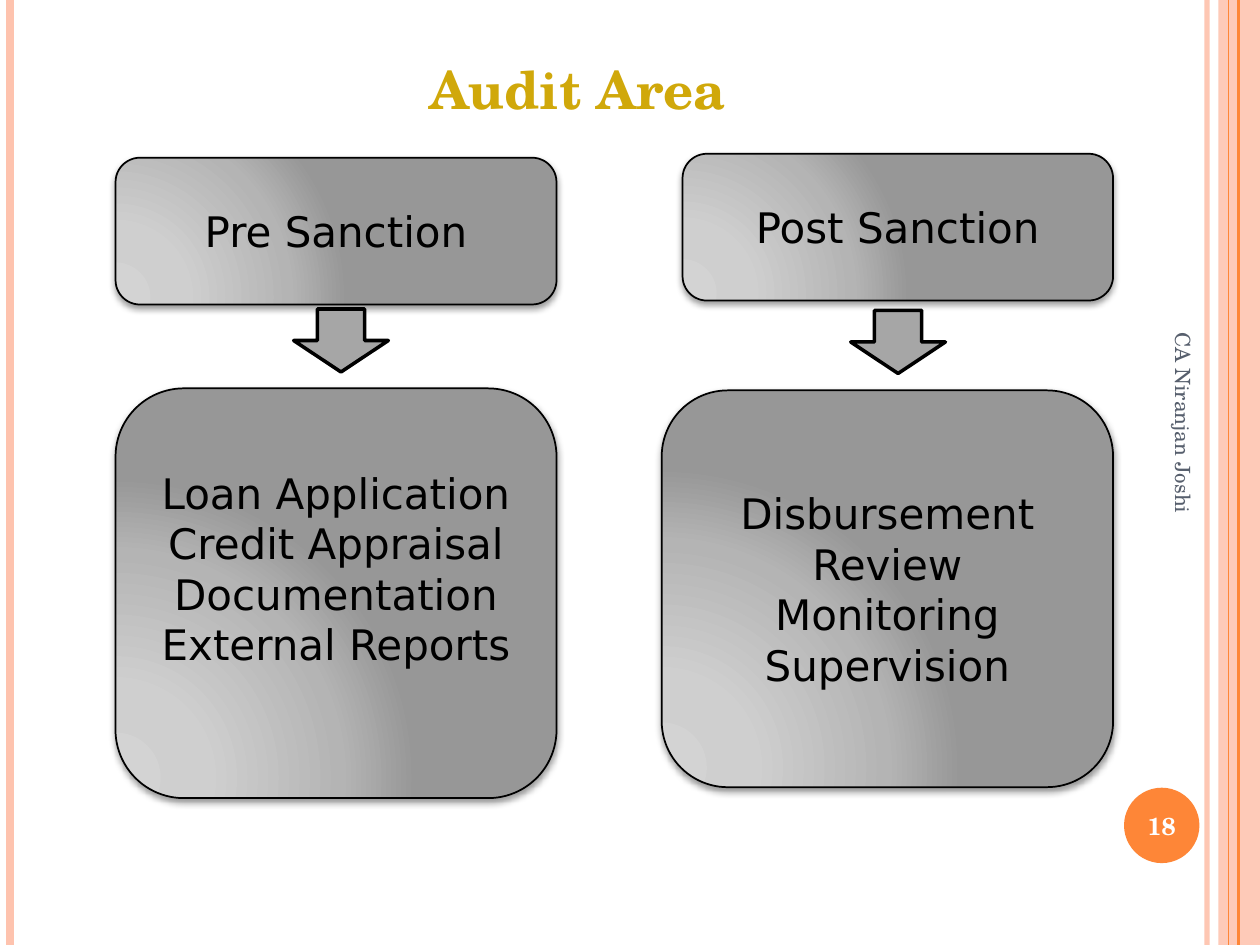
from dataclasses import dataclass

from lxml import etree
from pptx import Presentation
from pptx.dml.color import RGBColor
from pptx.enum.shapes import MSO_CONNECTOR, MSO_SHAPE
from pptx.enum.text import MSO_ANCHOR, PP_ALIGN
from pptx.oxml import parse_xml
from pptx.oxml.ns import qn
from pptx.util import Cm, Pt

ROUNDED = MSO_SHAPE.ROUNDED_RECTANGLE
PROCESS = MSO_SHAPE.FLOWCHART_ALTERNATE_PROCESS
DOWN_ARROW = MSO_SHAPE.DOWN_ARROW
RECTANGLE = MSO_SHAPE.RECTANGLE
OVAL = MSO_SHAPE.OVAL
STRAIGHT = MSO_CONNECTOR.STRAIGHT
CENTER, LEFT = PP_ALIGN.CENTER, PP_ALIGN.LEFT
MIDDLE, BOTTOM = MSO_ANCHOR.MIDDLE, MSO_ANCHOR.BOTTOM

SERIF, SANS = "TeX Gyre Schola", "DejaVu Sans"
BLACK, WHITE, GREY = "000000", "FFFFFF", "A6A6A6"
ORANGE, PEACH, GOLD, SLATE = "FE8637", "FEC3AE", "D0A80A", "575F6D"
SLIDE_WIDTH, SLIDE_HEIGHT = 25.4, 19.05
DRAWING_NS = "http://schemas.openxmlformats.org/drawingml/2006/main"
GRADIENT_STOPS = ((0, "D3D3D3"), (30, "CFCFCF"), (75, "B4B4B4"), (100, "979797"))


@dataclass(frozen=True)
class Rule:
    x: float
    color: str
    width: float
    opacity: int = 100


@dataclass(frozen=True)
class Box:
    left: float
    top: float
    width: float
    height: float


@dataclass(frozen=True)
class Stage:
    heading: str
    heading_box: Box
    arrow_box: Box
    steps: str
    steps_box: Box
    bottom_inset: float = 0.13


RULES = (
    Rule(24.33, PEACH, 3, 93),
    Rule(0.2, PEACH, 4.5),
    Rule(24.97, ORANGE, 1.5),
    Rule(24.77, ORANGE, 0.75),
)
STAGES = (
    Stage("Pre Sanction", Box(2.33, 3.18, 8.89, 2.96), Box(5.92, 6.23, 1.91, 1.27),
          "Loan Application\nCredit Appraisal\nDocumentation\nExternal Reports",
          Box(2.33, 7.83, 8.89, 8.26), 1.13),
    Stage("Post Sanction", Box(13.76, 3.1, 8.68, 2.96), Box(17.15, 6.26, 1.91, 1.27),
          "Disbursement\nReview\nMonitoring\nSupervision",
          Box(13.34, 7.87, 9.1, 8)),
)


def rgb(color: str) -> RGBColor:
    return RGBColor.from_string(color)


def bounds(box: Box) -> tuple:
    return Cm(box.left), Cm(box.top), Cm(box.width), Cm(box.height)


def write(shape, text: str, *, size: float, color: str, font: str = SERIF,
          bold: bool = False, align=CENTER, anchor=MIDDLE) -> None:
    frame = shape.text_frame
    frame.word_wrap = True
    frame.vertical_anchor = anchor
    frame.text = text
    for paragraph in frame.paragraphs:
        paragraph.alignment = align
        for run in paragraph.runs:
            run.font.name = font
            run.font.size = Pt(size)
            run.font.bold = bold
            run.font.color.rgb = rgb(color)


def set_opacity(fill_owner, percent: int) -> None:
    for color in fill_owner.iter(qn("a:srgbClr")):
        etree.SubElement(color, qn("a:alpha"), val=str(percent * 1000))


def draw_rule(slide, rule: Rule) -> None:
    x = Cm(rule.x)
    line = slide.shapes.add_connector(STRAIGHT, x, 0, x, Cm(SLIDE_HEIGHT))
    line.line.color.rgb = rgb(rule.color)
    line.line.width = Pt(rule.width)
    properties = line._element.spPr
    if rule.opacity < 100:
        set_opacity(properties, rule.opacity)
    etree.SubElement(properties, qn("a:effectLst"))


def draw_shape(slide, preset, box: Box, *, fill: str, outline: float = 0):
    shape = slide.shapes.add_shape(preset, *bounds(box))
    shape.shadow.inherit = False
    shape.fill.solid()
    shape.fill.fore_color.rgb = rgb(fill)
    if outline:
        shape.line.color.rgb = rgb(BLACK)
        shape.line.width = Pt(outline)
    else:
        shape.line.fill.background()
    return shape


def draw_panel(slide, preset, box: Box, text: str):
    panel = draw_shape(slide, preset, box, fill=GREY, outline=1)
    properties = panel._element.spPr
    stops = "".join(
        f'<a:gs pos="{position * 1000}"><a:srgbClr val="{color}"/></a:gs>'
        for position, color in GRADIENT_STOPS
    )
    gradient = parse_xml(
        f'<a:gradFill xmlns:a="{DRAWING_NS}" rotWithShape="1"><a:gsLst>{stops}</a:gsLst>'
        '<a:path path="circle"><a:fillToRect l="5000" t="100000" r="120000" b="10000"/>'
        "</a:path></a:gradFill>"
    )
    properties.replace(properties.find(qn("a:solidFill")), gradient)
    shadow = parse_xml(
        f'<a:outerShdw xmlns:a="{DRAWING_NS}" blurRad="{Pt(4)}" dist="{Pt(2)}" '
        f'dir="5400000" rotWithShape="0"><a:srgbClr val="{BLACK}"/></a:outerShdw>'
    )
    set_opacity(shadow, 40)
    properties.find(qn("a:effectLst")).append(shadow)
    write(panel, text, size=24, color=BLACK, font=SANS)
    return panel


def draw_stage(slide, stage: Stage) -> None:
    draw_panel(slide, ROUNDED, stage.heading_box, stage.heading)
    draw_shape(slide, DOWN_ARROW, stage.arrow_box, fill=GREY, outline=2)
    steps = draw_panel(slide, PROCESS, stage.steps_box, stage.steps)
    steps.text_frame.margin_bottom = Cm(stage.bottom_inset)


def draw_frame(slide) -> None:
    side_band = draw_shape(slide, RECTANGLE, Box(24.56, 0, 0.84, SLIDE_HEIGHT), fill=PEACH)
    set_opacity(side_band._element.spPr, 87)
    for rule in RULES:
        draw_rule(slide, rule)
    page_badge = draw_shape(slide, OVAL, Box(22.66, 15.88, 1.52, 1.52), fill=ORANGE)
    page_badge.text_frame.margin_left = page_badge.text_frame.margin_right = 0
    write(page_badge, "18", size=14, color=WHITE, bold=True)
    author = slide.shapes.add_textbox(*bounds(Box(19.41, 10.39, 8.89, 1.02)))
    author.rotation = 90
    write(author, "CA Niranjan Joshi", size=12, color=SLATE, align=LEFT)


def main() -> None:
    deck = Presentation()
    deck.slide_width, deck.slide_height = Cm(SLIDE_WIDTH), Cm(SLIDE_HEIGHT)
    slide = deck.slides.add_slide(deck.slide_layouts.get_by_name("Title Only"))
    title = slide.shapes.title
    title.left, title.top, title.width, title.height = bounds(Box(1.27, 0.76, 20.75, 1.78))
    write(title, "Audit Area", size=30, color=GOLD, bold=True, anchor=BOTTOM)
    draw_frame(slide)
    for stage in STAGES:
        draw_stage(slide, stage)
    deck.save("out.pptx")


if __name__ == "__main__":
    main()
